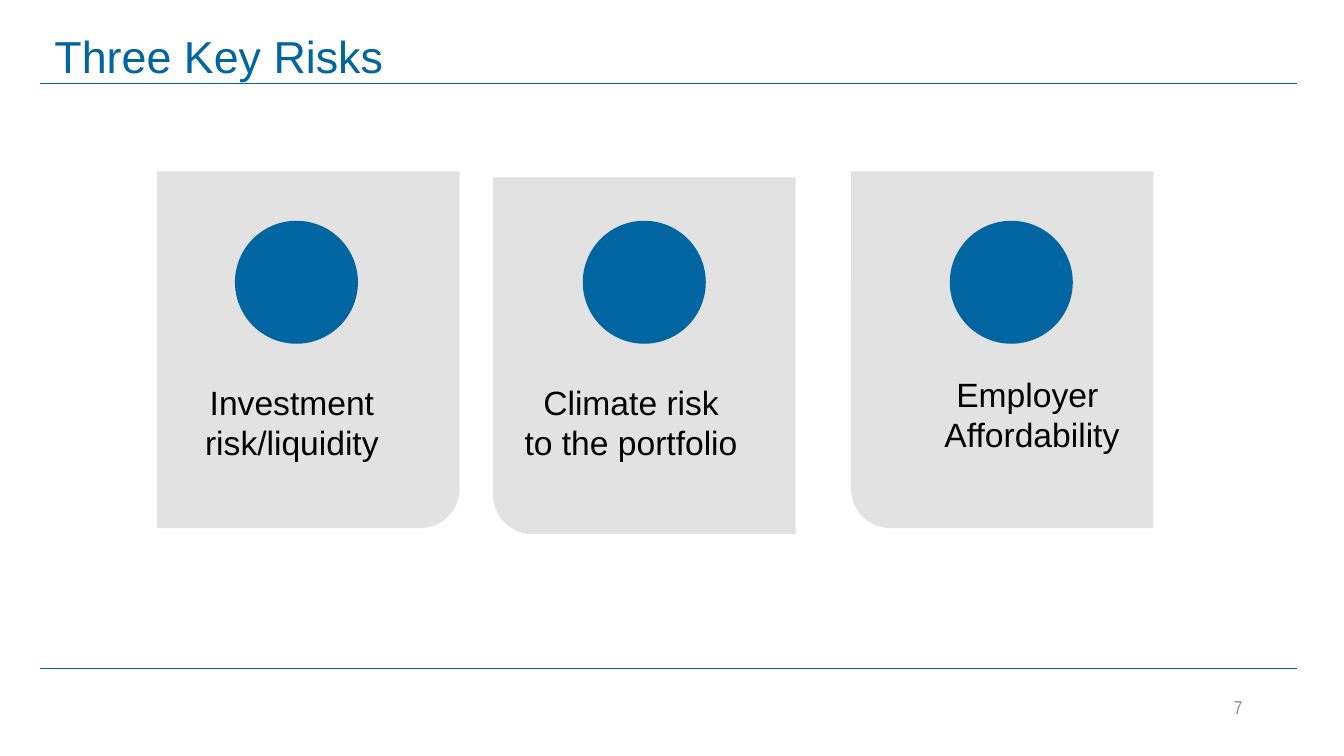
from lxml import etree
from pptx import Presentation
from pptx.dml.color import RGBColor
from pptx.enum.shapes import MSO_CONNECTOR, MSO_SHAPE
from pptx.enum.text import MSO_ANCHOR, PP_ALIGN
from pptx.oxml.ns import qn
from pptx.util import Inches, Pt

LEFT, CENTER, RIGHT = PP_ALIGN.LEFT, PP_ALIGN.CENTER, PP_ALIGN.RIGHT
TOP, MIDDLE = MSO_ANCHOR.TOP, MSO_ANCHOR.MIDDLE

BLUE = RGBColor(0x00, 0x65, 0xA1)
RULE_BLUE = RGBColor(0x00, 0x65, 0x9E)
CARD_GRAY = RGBColor(0xD9, 0xD9, 0xD9)
NUMBER_GRAY = RGBColor(0x8C, 0x8C, 0x8C)
BLACK = RGBColor(0x00, 0x00, 0x00)

# Content; lengths in inches
TITLE = "Three Key Risks"
SLIDE_NUMBER = "7"
RISKS = [
    {"lines": ["Investment", "risk/liquidity"], "card": (1.56, 1.7), "round_right": True,
     "circle_left": 2.33, "label": (1.25, 3.74, 2.62), "wrap": False},
    {"lines": ["Climate risk ", "to the portfolio "], "card": (4.89, 1.76), "round_right": False,
     "circle_left": 5.78, "label": (4.42, 3.74, 3.1), "wrap": False},
    {"lines": ["Employer ", "Affordability"], "card": (8.44, 1.7), "round_right": False,
     "circle_left": 9.42, "label": (8.57, 3.66, 2.66), "wrap": True},
]
CARD_WIDTH, CARD_HEIGHT = 3, 3.54
CIRCLE_TOP, CIRCLE_SIZE = 2.19, 1.22
LABEL_HEIGHT, LABEL_INDENT = 0.91, 0.67
RULE_LEFT, RULE_RIGHT = 0.4, 12.86
RULE_TOPS = (0.83, 6.63)


def write_text(shape, lines, size, color, font="Arial", align=LEFT, anchor=TOP,
               wrap=True, indent=0, spacing=None):
    frame = shape.text_frame
    frame.word_wrap = wrap
    frame.vertical_anchor = anchor
    for index, line in enumerate(lines):
        paragraph = frame.paragraphs[0] if index == 0 else frame.add_paragraph()
        paragraph.alignment = align
        paragraph.line_spacing = spacing
        if indent:
            properties = paragraph._p.get_or_add_pPr()
            properties.set("marL", str(Inches(indent)))
            properties.set("indent", "0")
        run = paragraph.add_run()
        run.text = line
        run.font.name = font
        run.font.size = Pt(size)
        run.font.color.rgb = color


def add_filled(slide, kind, left, top, width, height, color):
    shape = slide.shapes.add_shape(kind, Inches(left), Inches(top), Inches(width), Inches(height))
    shape.shadow.inherit = False
    shape.fill.solid()
    shape.fill.fore_color.rgb = color
    shape.line.fill.background()
    return shape


def add_rule(slide, top):
    rule = slide.shapes.add_connector(MSO_CONNECTOR.STRAIGHT, Inches(RULE_LEFT), Inches(top),
                                      Inches(RULE_RIGHT), Inches(top))
    rule.line.color.rgb = RULE_BLUE
    rule.line.width = Pt(0.5)
    etree.SubElement(rule._element.spPr, qn("a:effectLst"))


def add_card(slide, risk):
    card = add_filled(slide, MSO_SHAPE.ROUND_1_RECTANGLE, *risk["card"],
                      CARD_WIDTH, CARD_HEIGHT, CARD_GRAY)
    card.adjustments[0] = 0.131
    card.rotation = 180
    if risk["round_right"]:
        card._element.spPr.find(qn("a:xfrm")).set("flipH", "1")
    fill_color = card._element.spPr.find(qn("a:solidFill"))[0]
    etree.SubElement(fill_color, qn("a:alpha")).set("val", "75000")


def add_text_box(slide, left, top, width, height):
    return slide.shapes.add_textbox(Inches(left), Inches(top), Inches(width), Inches(height))


def main():
    presentation = Presentation()
    presentation.slide_width = Inches(13.33)
    presentation.slide_height = Inches(7.5)
    slide = presentation.slides.add_slide(presentation.slide_layouts[5])

    # Title, rules and slide number
    title = slide.shapes.title
    title.left, title.top = Inches(0.44), Inches(0.31)
    title.width, title.height = Inches(11.11), Inches(0.56)
    write_text(title, [TITLE], 32, BLUE, anchor=MIDDLE, spacing=0.9)
    for top in RULE_TOPS:
        add_rule(slide, top)
    number = add_text_box(slide, 9.42, 6.81, 3, 0.4)
    write_text(number, [SLIDE_NUMBER], 13.3, NUMBER_GRAY, font="Arial Narrow",
               align=RIGHT, anchor=MIDDLE)

    # Risk cards, each with a circle and a label
    for risk in RISKS:
        add_card(slide, risk)
        add_filled(slide, MSO_SHAPE.OVAL, risk["circle_left"], CIRCLE_TOP,
                   CIRCLE_SIZE, CIRCLE_SIZE, BLUE)
        label = add_text_box(slide, *risk["label"], LABEL_HEIGHT)
        write_text(label, risk["lines"], 24, BLACK, align=CENTER,
                   wrap=risk["wrap"], indent=LABEL_INDENT)

    presentation.save("out.pptx")


if __name__ == "__main__":
    main()
